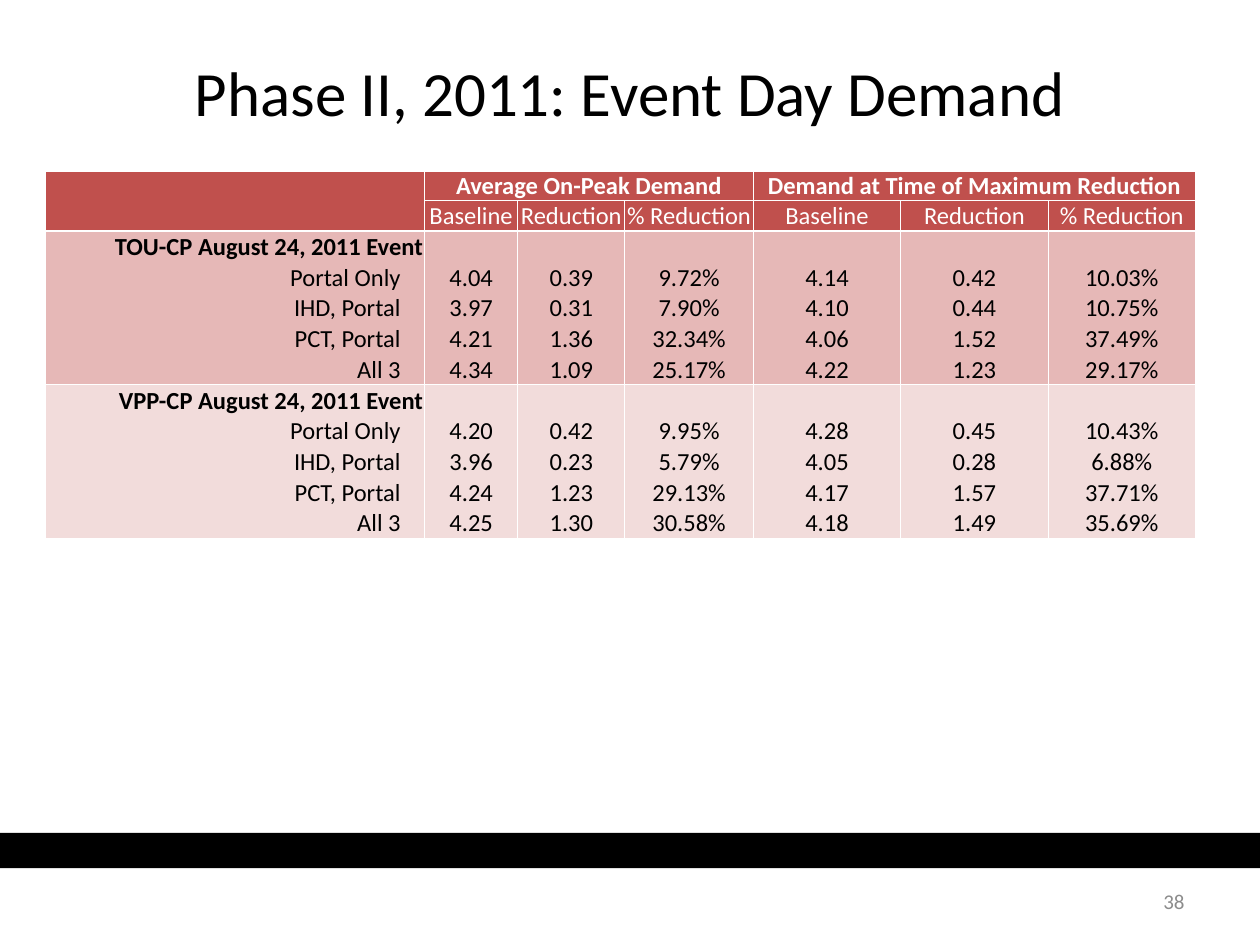
from dataclasses import dataclass

from lxml.etree import SubElement
from pptx import Presentation
from pptx.dml.color import RGBColor
from pptx.enum.shapes import MSO_SHAPE
from pptx.enum.text import MSO_ANCHOR, PP_ALIGN
from pptx.oxml.ns import qn
from pptx.util import Inches, Pt


@dataclass(frozen=True)
class Theme:
    font: str = "Calibri"
    title_size: int = 36
    table_size: int = 14
    number_size: int = 12
    black: str = "000000"
    white: str = "FFFFFF"
    gray: str = "8C8C8C"
    header: str = "C0504D"
    first_group: str = "E6B8B7"
    second_group: str = "F2DCDB"


THEME = Theme()

MEASURES = ["Baseline", "Reduction", "% Reduction"]
HEADERS = [
    ["", "Average On-Peak Demand", "", "", "Demand at Time of Maximum Reduction", "", ""],
    [""] + MEASURES * 2,
]
EVENTS = [
    ("TOU-CP August 24, 2011 Event", THEME.first_group, [
        ["Portal Only", "4.04", "0.39", "9.72%", "4.14", "0.42", "10.03%"],
        ["IHD, Portal", "3.97", "0.31", "7.90%", "4.10", "0.44", "10.75%"],
        ["PCT, Portal", "4.21", "1.36", "32.34%", "4.06", "1.52", "37.49%"],
        ["All 3", "4.34", "1.09", "25.17%", "4.22", "1.23", "29.17%"],
    ]),
    ("VPP-CP August 24, 2011 Event", THEME.second_group, [
        ["Portal Only", "4.20", "0.42", "9.95%", "4.28", "0.45", "10.43%"],
        ["IHD, Portal", "3.96", "0.23", "5.79%", "4.05", "0.28", "6.88%"],
        ["PCT, Portal", "4.24", "1.23", "29.13%", "4.17", "1.57", "37.71%"],
        ["All 3", "4.25", "1.30", "30.58%", "4.18", "1.49", "35.69%"],
    ]),
]
COLUMN_WIDTHS = [3.01, 0.74, 0.85, 1.02, 1.17, 1.17, 1.17]
ROW_HEIGHT = 0.23
MERGES = [((0, 0), (1, 0)), ((0, 1), (0, 3)), ((0, 4), (0, 6))]

# Line widths in points, by grid line; row lines not listed are not drawn
COLUMN_LINES = [0.5, 1, 0.5, 0.5, 1, 0.5, 0.5, 1]
ROW_LINES = {0: 1, 1: 0.5, 2: 1, 7: 0.5, 12: 0.5}


def write(frame, text, size, color=THEME.black, bold=False, align=PP_ALIGN.CENTER):
    """Put one formatted paragraph into a text frame."""
    paragraph = frame.paragraphs[0]
    paragraph.alignment = align
    if not text:
        # An empty cell still needs its type size, or the row grows
        paragraph._p.get_or_add_endParaRPr().set("sz", str(size * 100))
        return
    run = paragraph.add_run()
    run.text = text
    run.font.name = THEME.font
    run.font.size = Pt(size)
    run.font.bold = bold
    run.font.color.rgb = RGBColor.from_string(color)


def paint(fill, color):
    fill.solid()
    fill.fore_color.rgb = RGBColor.from_string(color)


def draw_borders(cell, widths):
    """Set the left, right, top and bottom lines; a width of None hides a line."""
    properties = cell._tc.get_or_add_tcPr()
    for index, (side, width) in enumerate(zip("LRTB", widths)):
        line = SubElement(properties, qn(f"a:ln{side}"))
        properties.insert(index, line)
        if width is None:
            SubElement(line, qn("a:noFill"))
        else:
            line.set("w", str(Pt(width)))
            SubElement(SubElement(line, qn("a:solidFill")), qn("a:srgbClr"), val=THEME.white)


class DemandSlide:
    def __init__(self, presentation, theme):
        self.theme = theme
        self.slide = presentation.slides.add_slide(presentation.slide_layouts[5])

    def title(self, text, left, top, width, height):
        heading = self.slide.shapes.title
        heading.left, heading.top = Inches(left), Inches(top)
        heading.width, heading.height = Inches(width), Inches(height)
        paint(heading.fill, self.theme.white)
        heading.text_frame.vertical_anchor = MSO_ANCHOR.MIDDLE
        write(heading.text_frame, text, self.theme.title_size)

    def band(self, left, top, width, height):
        band = self.slide.shapes.add_shape(
            MSO_SHAPE.RECTANGLE, Inches(left), Inches(top), Inches(width), Inches(height))
        band.shadow.inherit = False
        paint(band.fill, self.theme.black)
        band.line.fill.background()

    def page_number(self, text, left, top, width, height):
        number = self.slide.shapes.add_textbox(
            Inches(left), Inches(top), Inches(width), Inches(height))
        number.text_frame.word_wrap = True
        number.text_frame.vertical_anchor = MSO_ANCHOR.MIDDLE
        write(number.text_frame, text, self.theme.number_size,
              color=self.theme.gray, align=PP_ALIGN.RIGHT)

    def cell(self, cell, text, fill, right=0.01, inset=0.01, **text_format):
        paint(cell.fill, fill)
        cell.margin_left = cell.margin_top = Inches(inset)
        cell.margin_right, cell.margin_bottom = Inches(right), 0
        cell.vertical_anchor = MSO_ANCHOR.BOTTOM
        write(cell.text_frame, text, self.theme.table_size, **text_format)

    def table(self, left, top):
        row_count = len(HEADERS) + sum(1 + len(rows) for _, _, rows in EVENTS)
        column_count = len(COLUMN_WIDTHS)
        table = self.slide.shapes.add_table(
            row_count, column_count, Inches(left), Inches(top),
            Inches(sum(COLUMN_WIDTHS)), Inches(ROW_HEIGHT * row_count)).table
        table.first_row = table.horz_banding = False
        for column, width in zip(table.columns, COLUMN_WIDTHS):
            column.width = Inches(width)
        for row in table.rows:
            row.height = Inches(ROW_HEIGHT)
        table.rows[1].height = Inches(0.24)

        # Header rows
        for r, labels in enumerate(HEADERS):
            for c, label in enumerate(labels):
                self.cell(table.cell(r, c), label, self.theme.header, right=0, inset=0,
                          color=self.theme.white, bold=r == 0)

        # One block of rows for each event
        r = len(HEADERS)
        for event, fill, rows in EVENTS:
            event_row = [event] + [""] * (column_count - 1)
            for values in [event_row] + rows:
                is_event = values is event_row
                self.cell(table.cell(r, 0), values[0], fill, right=0.01 if is_event else 0.19,
                          bold=is_event, align=PP_ALIGN.RIGHT)
                for c, value in enumerate(values[1:], start=1):
                    self.cell(table.cell(r, c), value, fill)
                r += 1

        # Merged headers, then the lines around every visible cell
        for first, last in MERGES:
            table.cell(*first).merge(table.cell(*last))
        for r in range(row_count):
            for c in range(column_count):
                cell = table.cell(r, c)
                if not cell.is_spanned:
                    draw_borders(cell, [
                        COLUMN_LINES[c], COLUMN_LINES[c + cell.span_width],
                        ROW_LINES.get(r), ROW_LINES.get(r + cell.span_height)])


def main():
    presentation = Presentation()
    presentation.slide_width, presentation.slide_height = Inches(10), Inches(7.5)
    slide = DemandSlide(presentation, THEME)
    slide.band(0, 6.61, 10, 0.28)
    slide.page_number("38", 7.17, 6.95, 2.33, 0.4)
    slide.title("Phase II, 2011: Event Day Demand", 0.5, 0.3, 9, 0.85)
    slide.table(0.36, 1.36)
    presentation.save("out.pptx")


if __name__ == "__main__":
    main()
